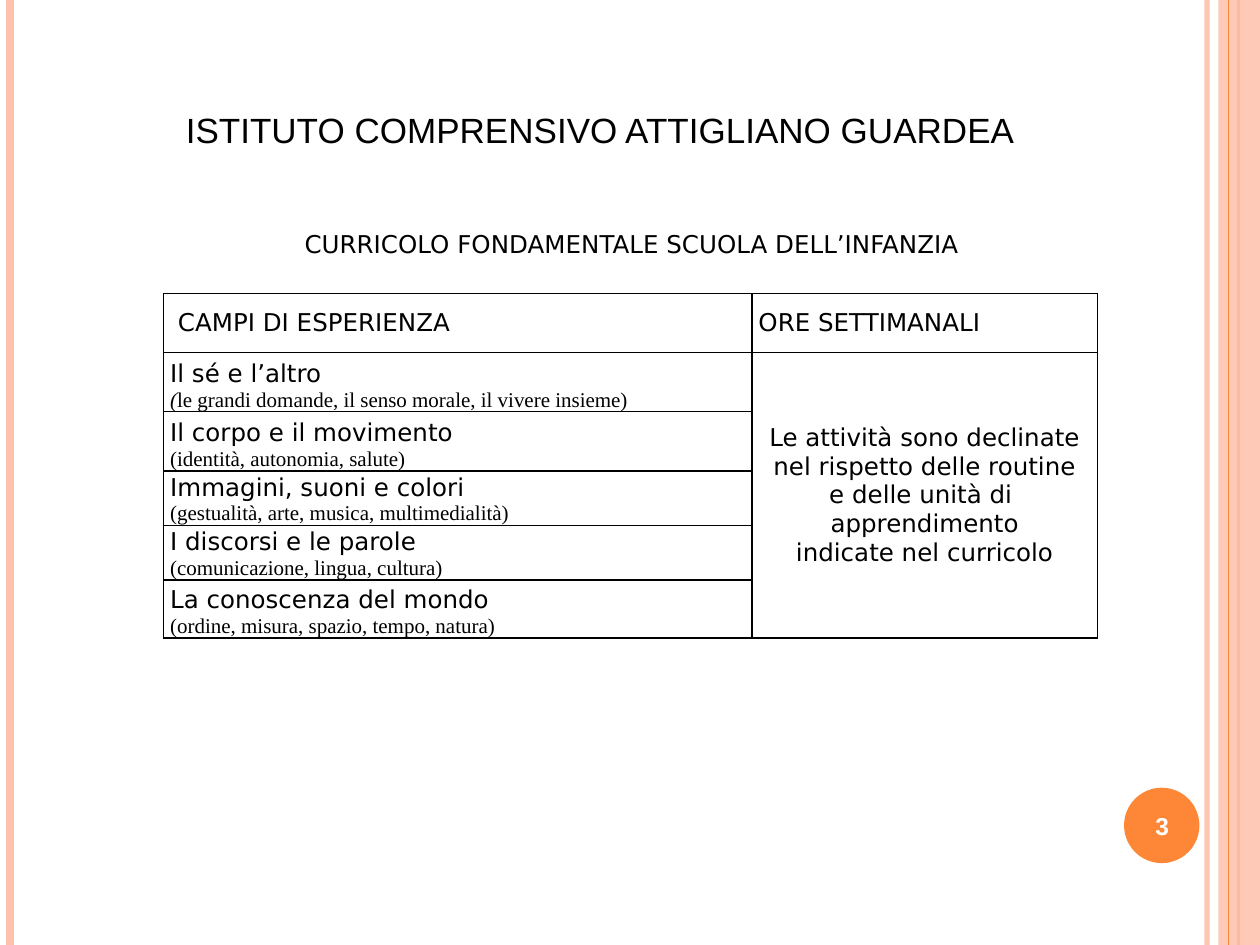
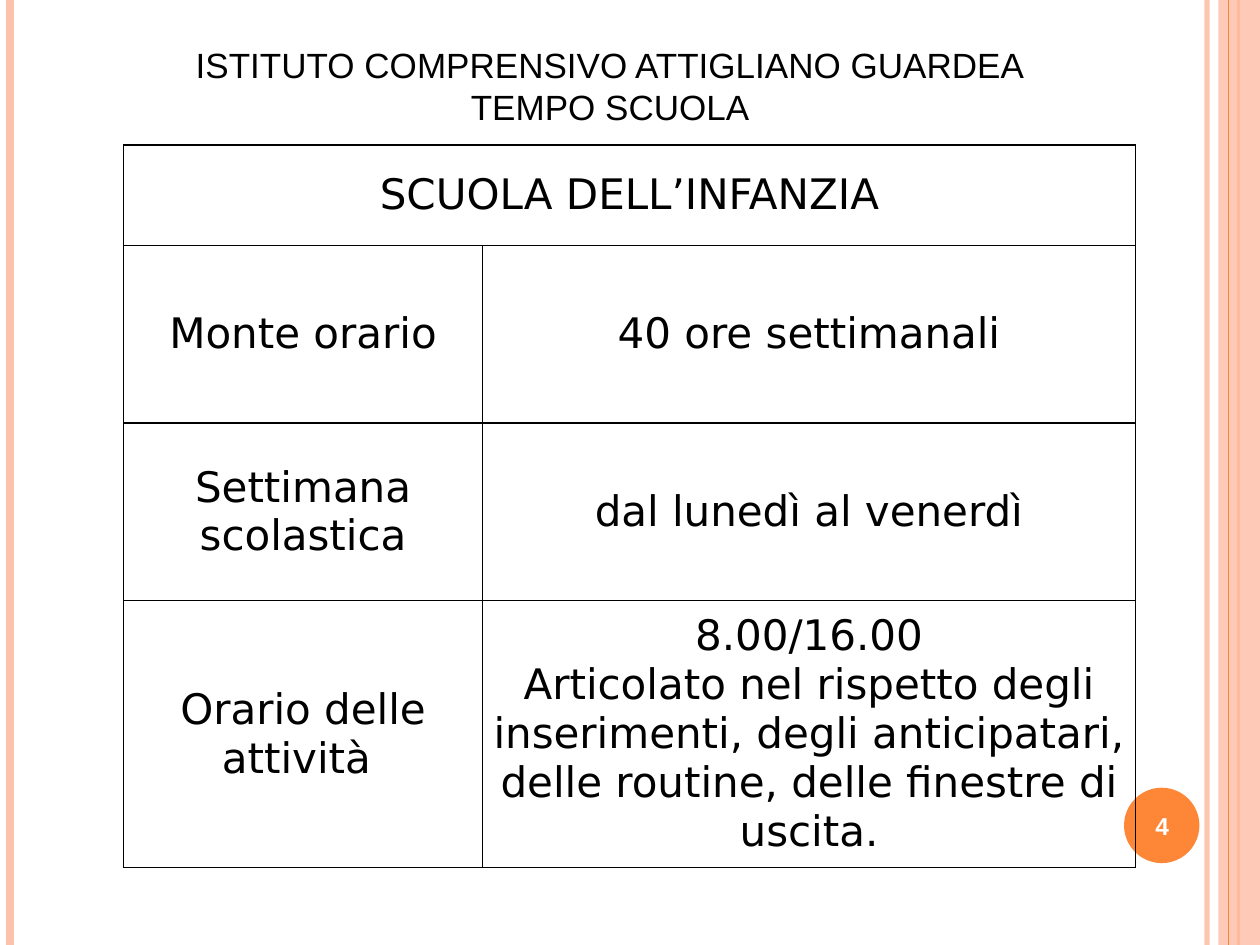
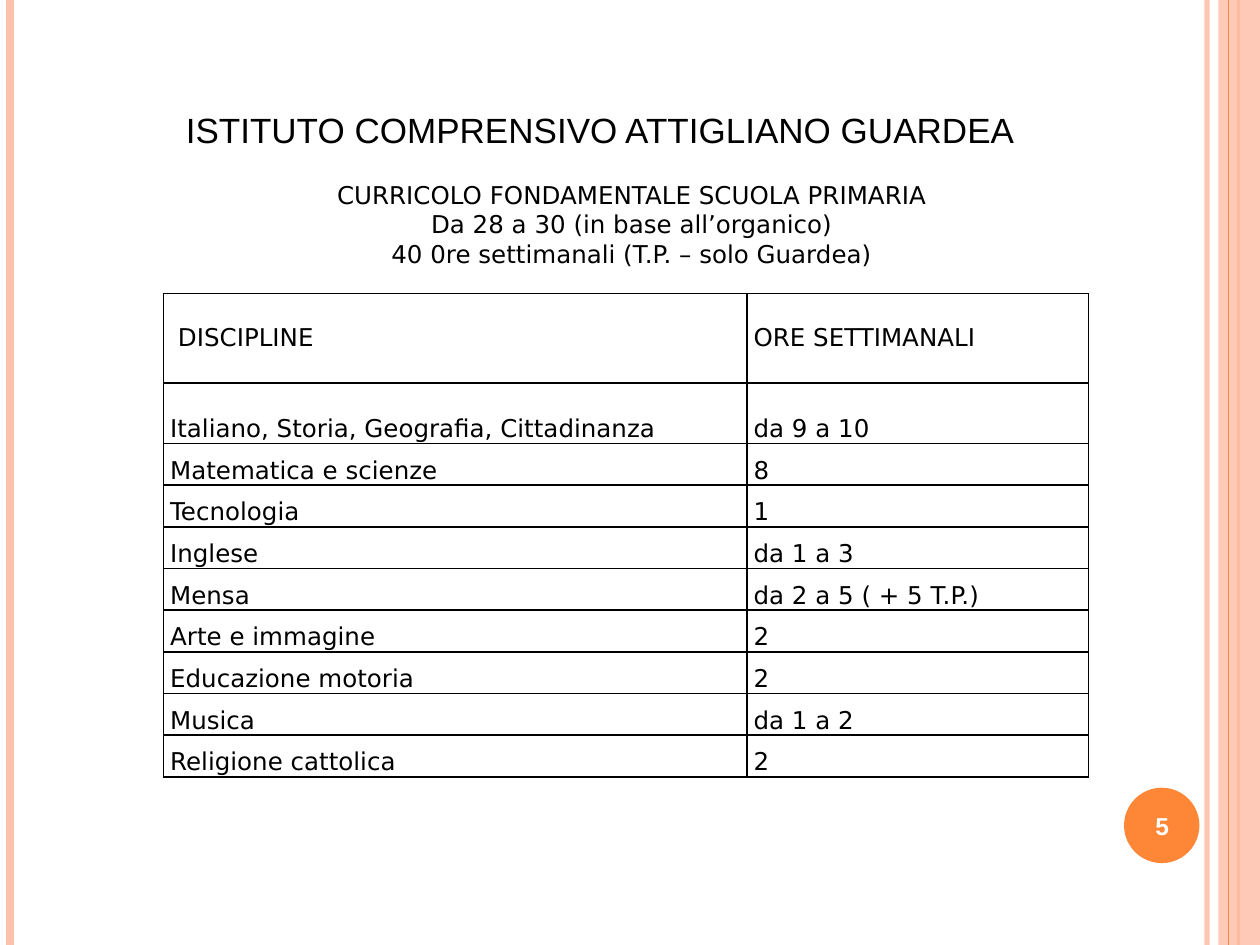
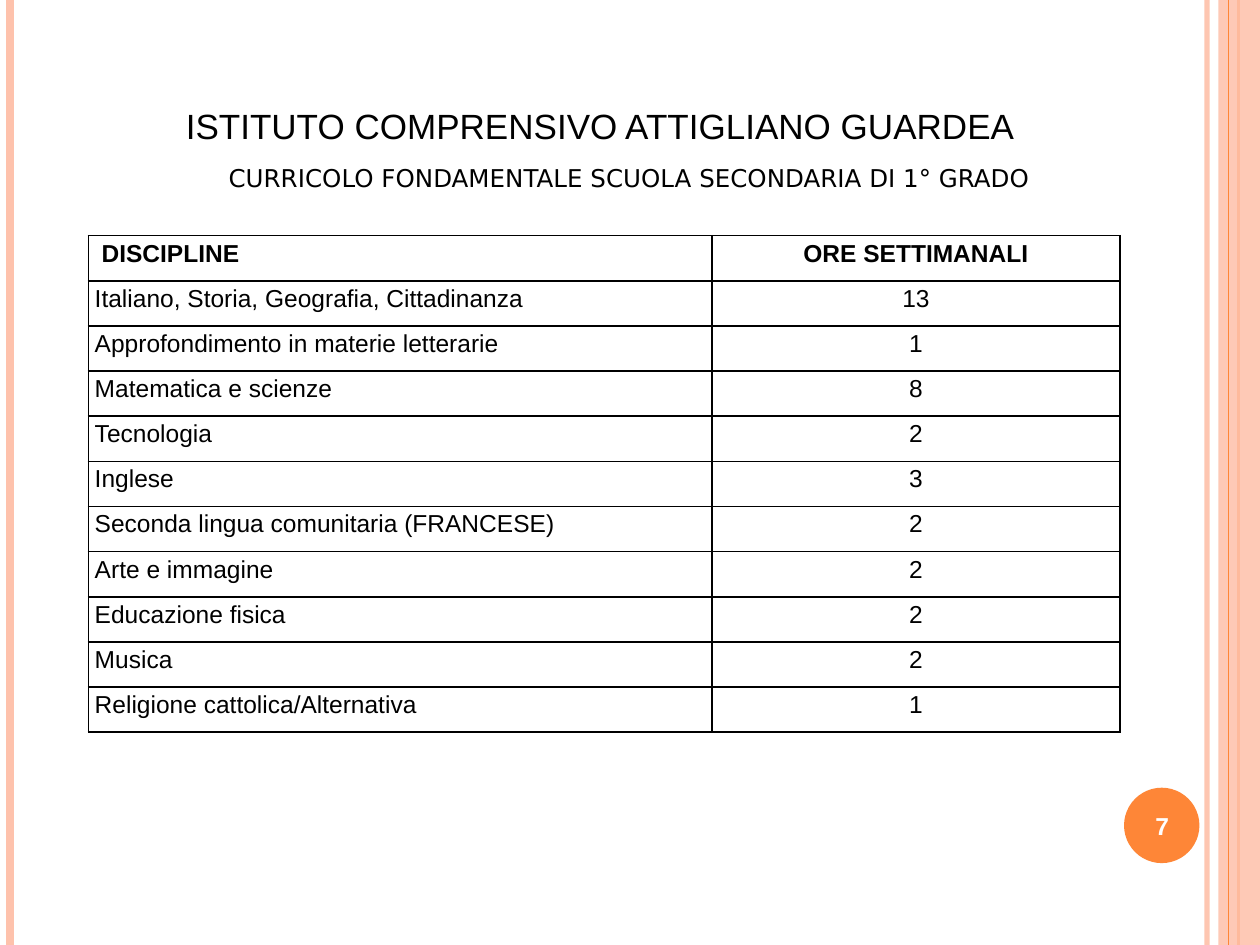
from lxml import etree
from pptx import Presentation
from pptx.dml.color import RGBColor
from pptx.enum import shapes, text
from pptx.oxml import ns
from pptx.util import Cm, Pt

HUES = {"ink": "000000", "paper": "FFFFFF", "peach": "FEC2AC", "orange": "FE8637"}
MID = text.MSO_ANCHOR.MIDDLE
LOW = text.MSO_ANCHOR.BOTTOM
TOP = text.MSO_ANCHOR.TOP
LEFT = text.PP_ALIGN.LEFT
CENTER = text.PP_ALIGN.CENTER
SANS = "DejaVu Sans"
SCHOOL = "ISTITUTO COMPRENSIVO ATTIGLIANO GUARDEA"


def write(host, paras, font="Arial", size=14, hue="ink", bold=False, align=CENTER,
          anchor=MID, side=0.25, edge=0.13, lead=None, before=None):
    frame = host.text_frame
    spot = host if hasattr(host, "vertical_anchor") else frame
    spot.vertical_anchor = anchor
    spot.margin_left = spot.margin_right = Cm(side)
    spot.margin_top = spot.margin_bottom = Cm(edge)
    frame.word_wrap = True
    for n, para in enumerate(paras):
        line = frame.add_paragraph() if n else frame.paragraphs[0]
        line.alignment = align
        if lead:
            line.line_spacing = lead
            line.space_before = Pt(before)
        for words, over in [(para, {})] if isinstance(para, str) else para:
            run = line.add_run()
            run.text = words
            run.font.name = over.get("font", font)
            run.font.size = Pt(over.get("size", size))
            run.font.italic = over.get("italic", False)
            run.font.bold = bold
            run.font.color.rgb = RGBColor.from_string(HUES[hue])


def fade(part, share):
    tint = next(part.element.iter(ns.qn("a:srgbClr")))
    etree.SubElement(tint, ns.qn("a:alpha"), val=str(share * 1000))


note = {"font": "Times New Roman", "size": 12}
plan = ["Le attività sono declinate", "nel rispetto delle routine", "e delle unità di ",
        "apprendimento", "indicate nel curricolo"]
fields = [
    ("Il sé e l’altro", [("(", {**note, "italic": True}),
                         ("le grandi domande, il senso morale, il vivere insieme)", note)]),
    ("Il corpo e il movimento", [("(identità, autonomia, salute)", note)]),
    ("Immagini, suoni e colori", [("(gestualità, arte, musica, multimedialità)", note)]),
    ("I discorsi e le parole", [("(comunicazione, lingua, cultura)", note)]),
    ("La conoscenza del mondo", [("(ordine, misura, spazio, tempo, natura)", note)]),
]
slim = {"font": SANS, "side": 0.13, "edge": 0, "align": LEFT}
wide = {"font": SANS, "side": 0.18, "edge": 0, "size": 24}
airy = {"side": 0.13, "edge": 0, "anchor": TOP, "lead": 1.15, "before": 12}

pages = [
    {
        "num": "3", "title": [SCHOOL], "spot": (1.7, 2.06, 20.8, 1.12),
        "sub": ["CURRICOLO FONDAMENTALE SCUOLA DELL’INFANZIA"], "under": (3.91, 4.52, 17.65, 0.89),
        "at": (3.3, 5.92), "cols": [11.86, 6.96], "rows": [1.19, 1.19, 1.19, 0.84, 0.84, 1.17],
        "form": [{**slim, "anchor": LOW}, {**slim, "align": CENTER}], "head": slim | {"anchor": MID},
        "merge": (1, 1, 5, 1),
        "data": [[" CAMPI DI ESPERIENZA", "ORE SETTIMANALI"]]
        + [[field, None if n else plan] for n, field in enumerate(fields)],
    },
    {
        "num": "4", "title": [SCHOOL, "TEMPO SCUOLA"], "spot": (1.9, 0.53, 20.8, 2.39),
        "at": (2.49, 2.92), "cols": [7.24, 13.16], "rows": [2.03, 3.58, 3.58, 5.38],
        "form": [wide, wide], "head": {}, "merge": (0, 0, 0, 1),
        "data": [["SCUOLA DELL’INFANZIA", None],
                 ["Monte orario", "40 ore settimanali"],
                 ["Settimana scolastica", "dal lunedì al venerdì"],
                 ["Orario delle attività ",
                  ["8.00/16.00", "Articolato nel rispetto degli inserimenti, degli anticipatari, "
                   "delle routine, delle finestre di uscita."]]],
    },
    {
        "num": "5", "title": [SCHOOL], "spot": (1.7, 2.06, 20.8, 1.12),
        "sub": ["CURRICOLO FONDAMENTALE SCUOLA PRIMARIA", "Da 28 a 30 (in base all’organico)",
                "40 0re settimanali (T.P. – solo Guardea)"], "under": (3.91, 3.53, 17.65, 1.9),
        "at": (3.3, 5.92), "cols": [11.76, 6.88], "rows": [1.8, 1.22] + [0.84] * 8,
        "form": [{**slim, "anchor": LOW}] * 2, "head": {"anchor": MID},
        "data": [[" DISCIPLINE", "ORE SETTIMANALI"],
                 ["Italiano, Storia, Geografia, Cittadinanza", "da 9 a 10"],
                 ["Matematica e scienze", "8"], ["Tecnologia", "1"], ["Inglese", "da 1 a 3"],
                 ["Mensa", "da 2 a 5 ( + 5 T.P.)"], ["Arte e immagine", "2"],
                 ["Educazione motoria", "2"], ["Musica", "da 1 a 2"], ["Religione cattolica", "2"]],
    },
    {
        "num": "7", "title": [SCHOOL], "spot": (1.7, 1.98, 20.8, 1.12),
        "sub": ["CURRICOLO FONDAMENTALE SCUOLA SECONDARIA DI 1° GRADO"],
        "under": (3.86, 3.18, 17.65, 0.89),
        "at": (1.78, 4.75), "cols": [12.57, 8.23], "rows": [0.91] * 11,
        "form": [{**airy, "align": LEFT}, airy], "head": {"bold": True},
        "data": [[" DISCIPLINE", "ORE SETTIMANALI"],
                 ["Italiano, Storia, Geografia, Cittadinanza", "13"],
                 ["Approfondimento in materie letterarie", "1"], ["Matematica e scienze", "8"],
                 ["Tecnologia", "2"], ["Inglese", "3"],
                 ["Seconda lingua comunitaria (FRANCESE)", "2"], ["Arte e immagine", "2"],
                 ["Educazione fisica", "2"], ["Musica", "2"],
                 ["Religione cattolica/Alternativa", "1"]],
    },
]

deck = Presentation()
deck.slide_width, deck.slide_height = Cm(25.4), Cm(19.05)
layout = deck.slide_layouts[5]
slides = [deck.slides.add_slide(layout) for page in pages]

pen = slides[0].shapes
bars = []
for x, hue, width in [(24.33, "peach", 3), (0.21, "peach", 4.5),
                      (24.97, "orange", 1.5), (24.77, "orange", 0.75)]:
    bar = pen.add_connector(shapes.MSO_CONNECTOR.STRAIGHT, Cm(x), 0, Cm(x), deck.slide_height)
    bar.line.color.rgb = RGBColor.from_string(HUES[hue])
    bar.line.width = Pt(width)
    etree.SubElement(bar.element.spPr, ns.qn("a:effectLst"))
    bars.append(bar)
fade(bars[0], 93)

band = pen.add_shape(shapes.MSO_SHAPE.RECTANGLE, Cm(24.56), 0, Cm(0.84), deck.slide_height)
disc = pen.add_shape(shapes.MSO_SHAPE.OVAL, Cm(22.66), Cm(15.88), Cm(1.52), Cm(1.52))
for part, hue in [(band, "peach"), (disc, "orange")]:
    part.fill.solid()
    part.fill.fore_color.rgb = RGBColor.from_string(HUES[hue])
    part.line.fill.background()
    part.shadow.inherit = False
fade(band, 87)

for n, part in enumerate([*bars[:3], band, bars[3], disc]):
    part.element[0][0].set("id", str(20 + n))
    deck.slide_master.shapes.element.append(part.element)

for slide, page in zip(slides, pages):
    title = slide.shapes.title
    title.left, title.top, title.width, title.height = map(Cm, page["spot"])
    write(title, page["title"], size=20)
    title.text_frame.auto_size = text.MSO_AUTO_SIZE.SHAPE_TO_FIT_TEXT

    if "sub" in page:
        sub = slide.shapes.add_textbox(*map(Cm, page["under"]))
        write(sub, page["sub"], font=SANS, anchor=TOP, side=0.1, edge=0.1)

    cols, rows = page["cols"], page["rows"]
    grid = slide.shapes.add_table(len(rows), len(cols), *map(Cm, page["at"]),
                                  Cm(sum(cols)), Cm(sum(rows))).table
    grid.first_row = grid.horz_banding = False
    for col, width in zip(grid.columns, cols):
        col.width = Cm(width)
    for row, height in zip(grid.rows, rows):
        row.height = Cm(height)
    if "merge" in page:
        r1, c1, r2, c2 = page["merge"]
        grid.cell(r1, c1).merge(grid.cell(r2, c2))
    for r, line in enumerate(page["data"]):
        for c, entry in enumerate(line):
            cell = grid.cell(r, c)
            if entry:
                form = page["form"][c] | (page["head"] if r == 0 else {})
                write(cell, [entry] if isinstance(entry, str) else entry, **form)
            cell.fill.background()
            props = cell._tc.get_or_add_tcPr()
            for n, edge in enumerate(["a:lnL", "a:lnR", "a:lnT", "a:lnB"]):
                rule = etree.Element(ns.qn(edge), w=str(Pt(1)))
                ink = etree.SubElement(rule, ns.qn("a:solidFill"))
                etree.SubElement(ink, ns.qn("a:srgbClr"), val=HUES["ink"])
                props.insert(n, rule)

    num = slide.shapes.add_textbox(Cm(22.58), Cm(15.93), Cm(1.7), Cm(1.45))
    write(num, [page["num"]], hue="paper", bold=True)

deck.save("out.pptx")
